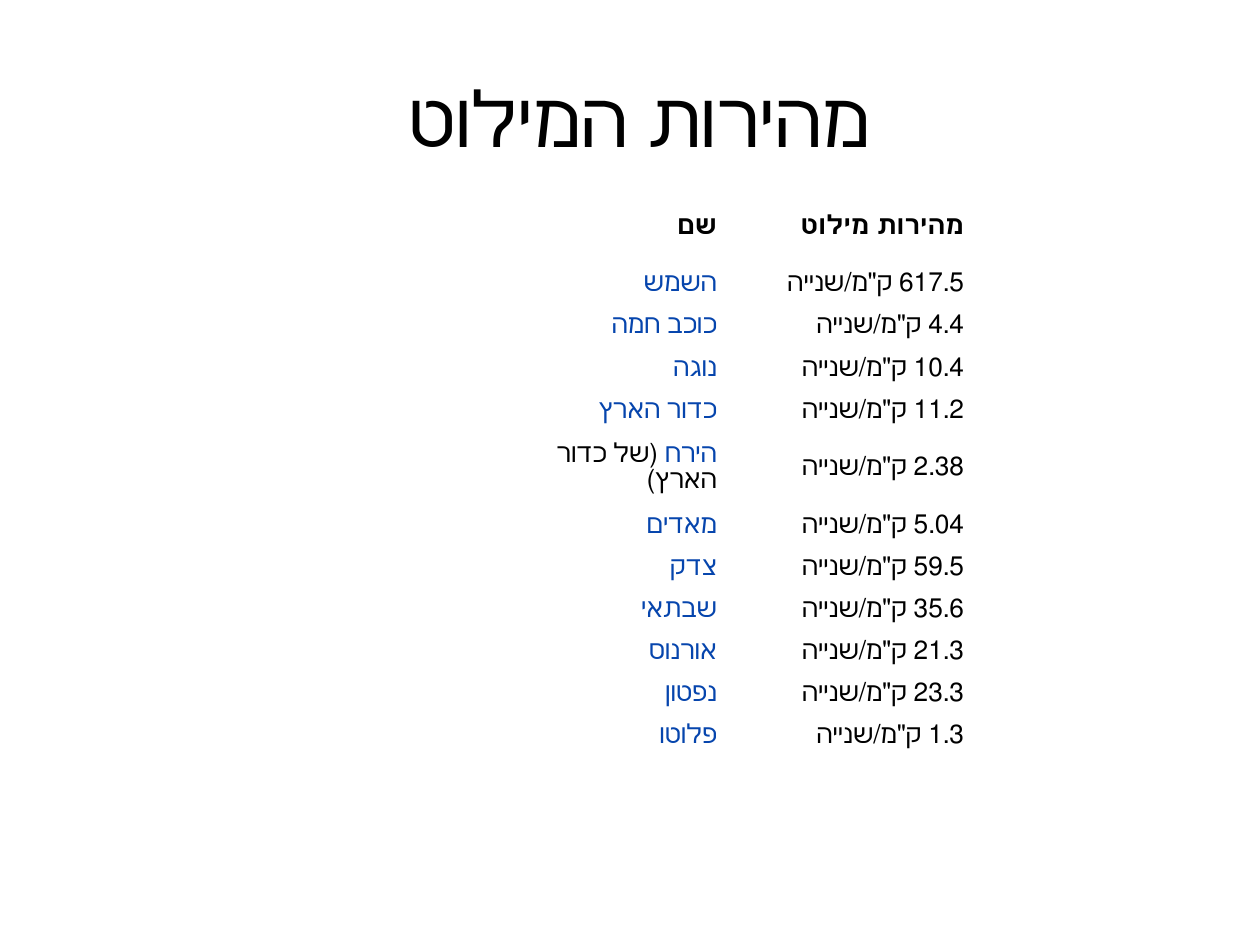
from pptx import Presentation
from pptx.dml.color import RGBColor
from pptx.enum.text import MSO_ANCHOR, PP_ALIGN
from pptx.util import Emu, Pt

SCALE = 914400 // 126
COLORS = {"black": "000000", "link": "0645AD"}
UNIT = 'ק"מ/שנייה'

# Body name, plain note after it, escape speed
BODIES = [
    ("השמש", "", "617.5"),
    ("כוכב חמה", "", "4.4"),
    ("נוגה", "", "10.4"),
    ("כדור הארץ", "", "11.2"),
    ("הירח", " (של כדור הארץ)", "2.38"),
    ("מאדים", "", "5.04"),
    ("צדק", "", "59.5"),
    ("שבתאי", "", "35.6"),
    ("אורנוס", "", "21.3"),
    ("נפטון", "", "23.3"),
    ("פלוטו", "", "1.3"),
]


def px(n):
    return Emu(n * SCALE)


def write(frame, *runs, size=15, bold=False, align=PP_ALIGN.RIGHT, font="Calibri"):
    """Fill a frame with one right-to-left paragraph of (text, color) runs."""
    par = frame.paragraphs[0]
    par.alignment = align
    par._p.get_or_add_pPr().set("rtl", "1")
    for text, color in runs:
        run = par.add_run()
        run.text = text
        run.font.name = font
        run.font.size = Pt(size)
        run.font.bold = bold
        run.font.color.rgb = RGBColor.from_string(COLORS[color])
    # Keeps empty cells as low as filled ones
    par._p.get_or_add_endParaRPr().set("sz", str(size * 100))


class Deck:
    def __init__(self):
        self.prs = Presentation()
        self.prs.slide_width, self.prs.slide_height = px(1260), px(945)
        self.slide = self.prs.slides.add_slide(self.prs.slide_layouts[5])

    def title(self, text, x, y, w, h):
        shape = self.slide.shapes.title
        shape.left, shape.top, shape.width, shape.height = map(px, (x, y, w, h))
        shape.text_frame.vertical_anchor = MSO_ANCHOR.MIDDLE
        write(shape.text_frame, (text, "black"), size=44, align=PP_ALIGN.CENTER)

    def table(self, rows, x, y, widths, heights):
        frame = self.slide.shapes.add_table(
            len(rows), len(widths), px(x), px(y), px(sum(widths)), px(sum(heights)))
        table = frame.table
        table.first_row = table.horz_banding = False
        # Plain style without grid lines
        table._tbl.tblPr[0].text = "{2D5ABB26-0587-4C30-8999-92F81FD0307C}"
        for col, width in zip(table.columns, widths):
            col.width = px(width)
        for i, (row, height) in enumerate(zip(rows, heights)):
            table.rows[i].height = px(height)
            for j, runs in enumerate(row):
                cell = table.cell(i, j)
                cell.fill.background()
                cell.vertical_anchor = MSO_ANCHOR.MIDDLE
                cell.margin_left = cell.margin_right = px(10)
                cell.margin_top = cell.margin_bottom = px(5)
                write(cell.text_frame, *runs, bold=i == 0)


def main():
    deck = Deck()
    deck.title("מהירות המילוט ", 63, 38, 1134, 158)

    # Header, then one row per body; the first column stays empty
    rows = [[[], [("שם", "black")], [("מהירות מילוט", "black")]]]
    heights = [73]
    for name, note, speed in BODIES:
        label = [(name, "link")] + ([(note, "black")] if note else [])
        rows.append([[], label, [(f"{speed} {UNIT}", "black")]])
        heights.append(73 if note else 42)
    deck.table(rows, 233, 190, [247] * 3, heights)

    deck.prs.save("out.pptx")


if __name__ == "__main__":
    main()
